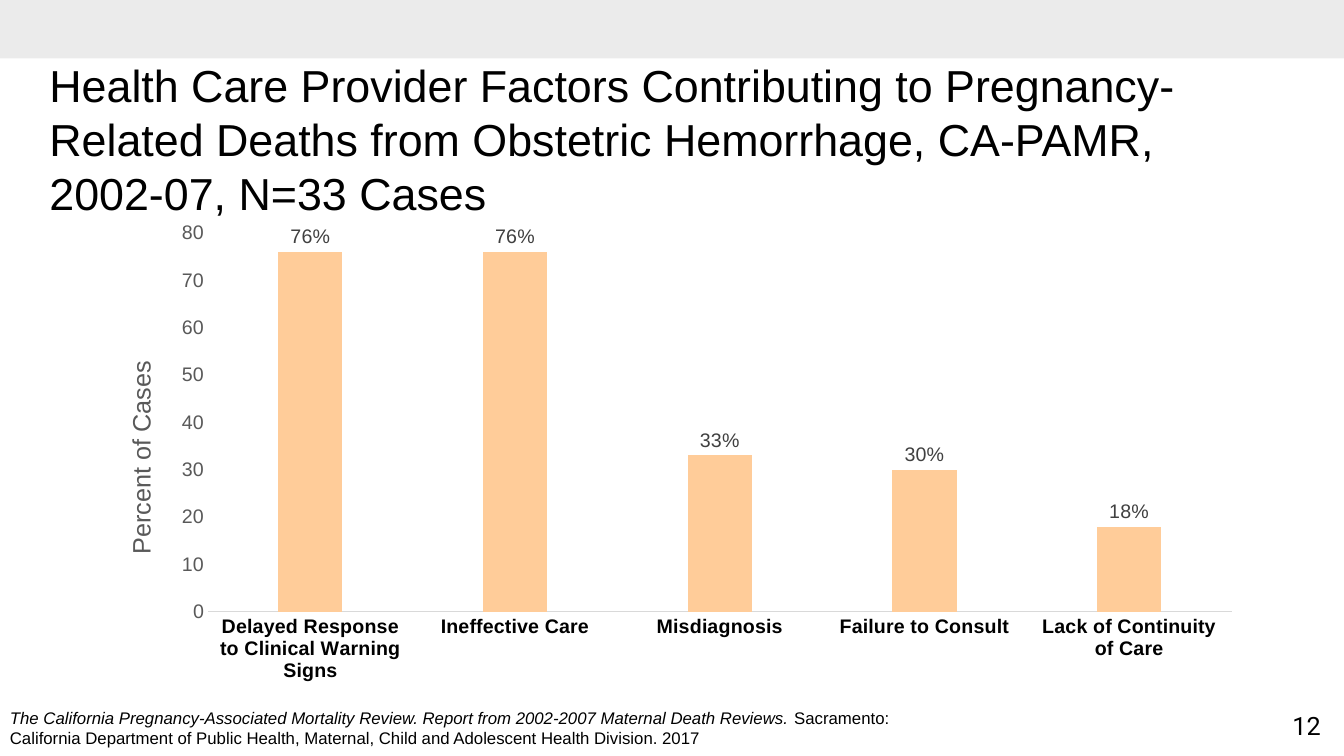
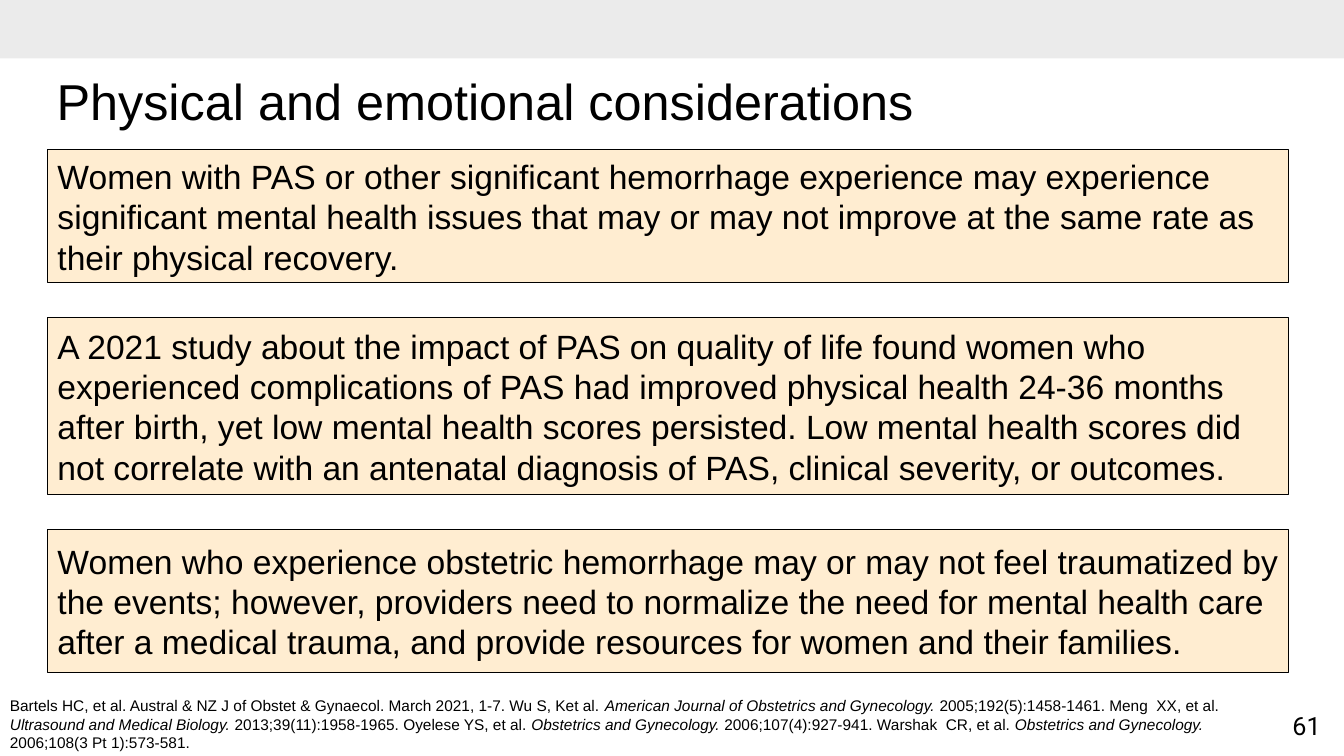
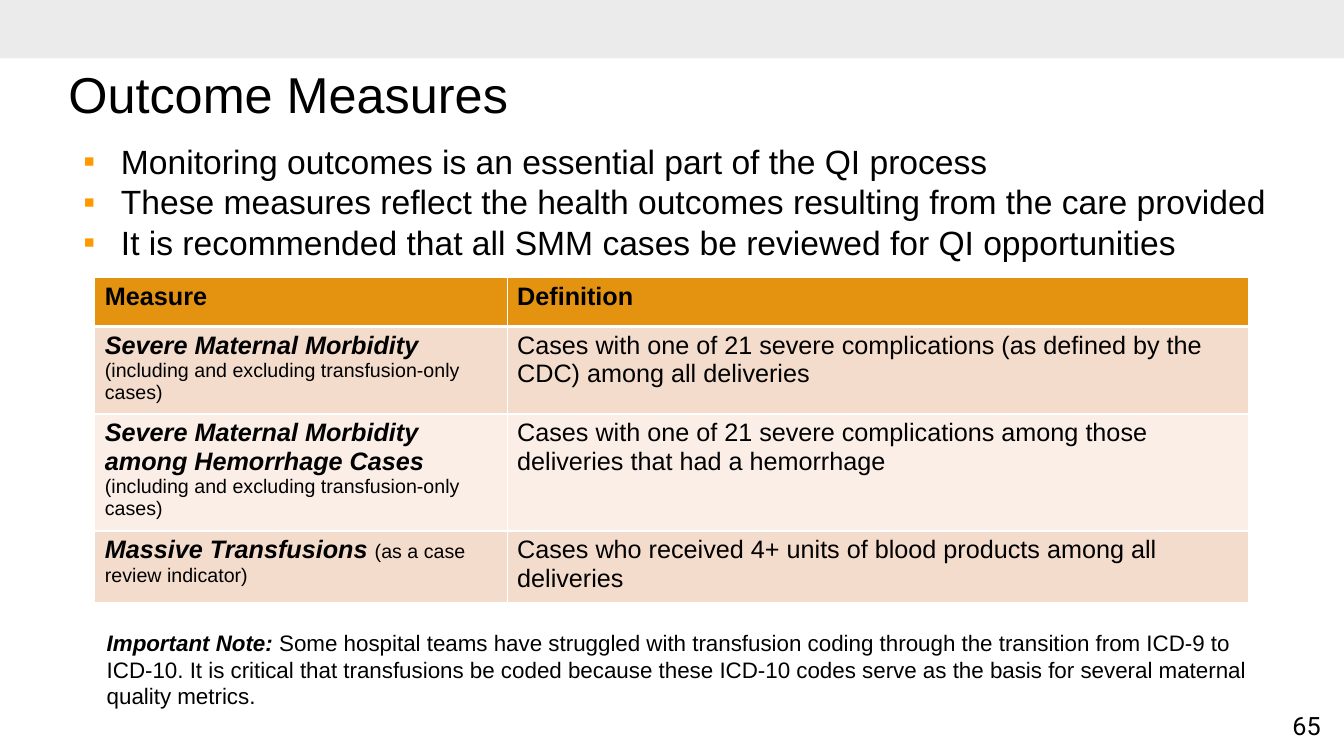
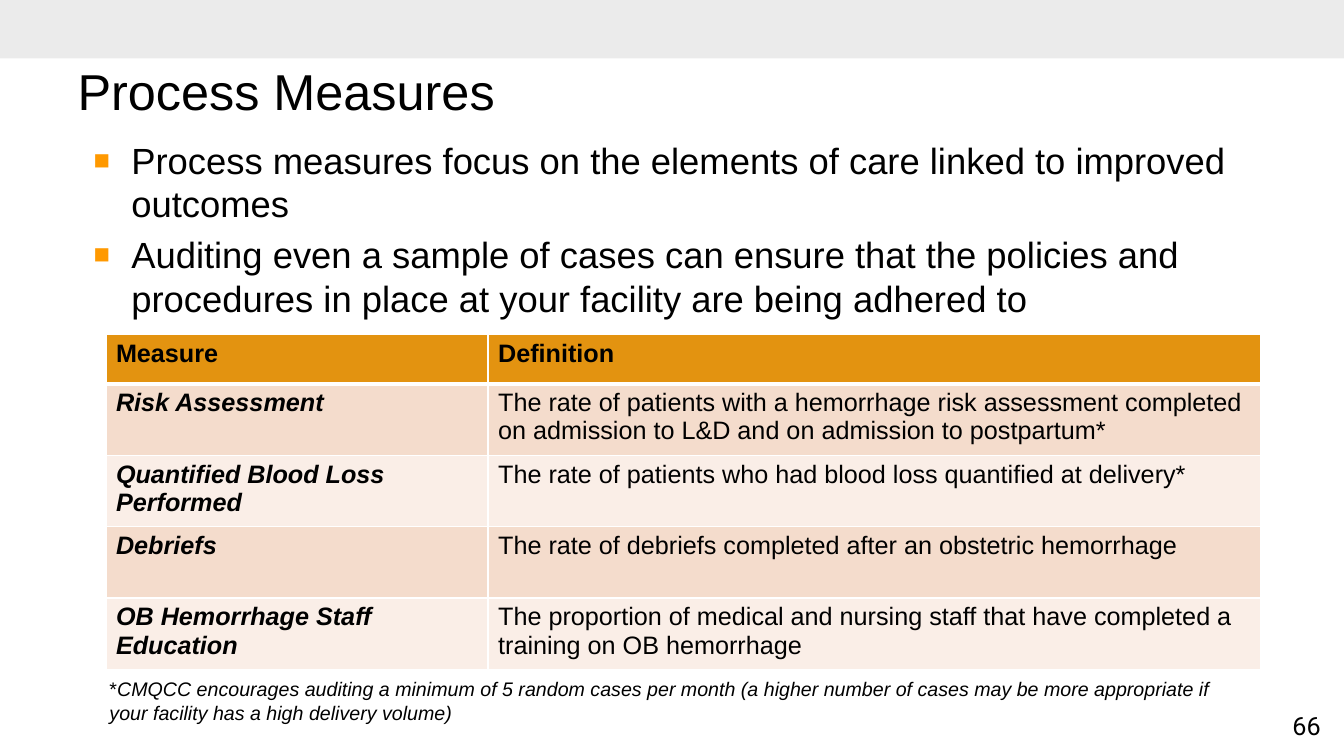
from itertools import accumulate

from lxml import etree
from pptx import Presentation
from pptx.chart import data as chart_data
from pptx.dml import color
from pptx.enum import chart as chart_enum, shapes, text
from pptx.oxml import ns
from pptx.util import Cm, Pt

BLACK, WHITE, BAND = "000000", "FFFFFF", "E3E3E3"
GRAY, DARK_GRAY, AXIS_LINE = "595959", "404040", "D9D9D9"
PEACH, CREAM, BULLET = "FFCC99", "FFEDD1", "FF9900"
HEADER, ROW_ODD, ROW_EVEN = "E39310", "F4DCCC", "FAEEE7"
PLAIN, BOLD, ITALIC, BOLD_ITALIC = "", "b", "i", "bi"


def rgb(value):
    return color.RGBColor.from_string(value)


def cm_box(box):
    return [Cm(length) for length in box]


def sub(parent, tag, **attributes):
    return etree.SubElement(parent, ns.qn(tag), attributes)


def style_font(font, size, shade=BLACK, face="Arial", style=PLAIN):
    font.size = Pt(size)
    font.name = face
    font.color.rgb = rgb(shade)
    font.bold = "b" in style
    font.italic = "i" in style


def add_runs(paragraph, runs, face="Arial"):
    for words, size, style in runs:
        run = paragraph.add_run()
        run.text = words
        style_font(run.font, size, face=face, style=style)


def set_frame(frame, anchor=text.MSO_ANCHOR.TOP):
    frame.word_wrap = True
    frame.auto_size = text.MSO_AUTO_SIZE.NONE
    frame.vertical_anchor = anchor


def add_note(slide, box, runs, align=text.PP_ALIGN.LEFT, face="Arial"):
    frame = slide.shapes.add_textbox(*cm_box(box)).text_frame
    set_frame(frame)
    paragraph = frame.paragraphs[0]
    paragraph.alignment = align
    add_runs(paragraph, runs, face)


def add_panel(slide, box, fill):
    panel = slide.shapes.add_shape(shapes.MSO_SHAPE.RECTANGLE, *cm_box(box))
    panel.shadow.inherit = False
    panel.fill.solid()
    panel.fill.fore_color.rgb = rgb(fill)
    return panel


def start_slide(deck, title, title_box, number, size=36):
    slide = deck.slides.add_slide(deck.slide_layouts[5])
    band = add_panel(slide, (0, 0, 33.91, 1.47), BAND)
    band.line.fill.background()
    tint = band.fill._xPr.find(".//" + ns.qn("a:srgbClr"))
    sub(tint, "a:alpha", val="70000")
    add_note(slide, (32.28, 17.78, 1.3, 1.02), [(number, 18, PLAIN)],
             text.PP_ALIGN.CENTER, "Roboto")
    heading = slide.shapes.title
    heading.left, heading.top, heading.width, heading.height = cm_box(title_box)
    set_frame(heading.text_frame, text.MSO_ANCHOR.MIDDLE)
    paragraph = heading.text_frame.paragraphs[0]
    paragraph.alignment = text.PP_ALIGN.LEFT
    add_runs(paragraph, [(title, size, PLAIN)])
    return slide


def add_bullets(slide, box, items, size, mark, mark_size=100, gap=0):
    frame = slide.shapes.add_textbox(*cm_box(box)).text_frame
    set_frame(frame)
    for index, item in enumerate(items):
        paragraph = frame.paragraphs[0] if index == 0 else frame.add_paragraph()
        if index:
            paragraph.space_before = Pt(gap)
        properties = paragraph._p.get_or_add_pPr()
        properties.set("marL", str(Cm(0.95)))
        properties.set("indent", str(-Cm(0.95)))
        sub(sub(properties, "a:buClr"), "a:srgbClr", val=BULLET)
        sub(properties, "a:buSzPct", val=str(mark_size * 1000))
        sub(properties, "a:buFont", typeface="Arial")
        sub(properties, "a:buChar", char=mark)
        add_runs(paragraph, [(item, size, PLAIN)])


def add_text_panels(slide, left, top, width, gap, panels):
    for height, words in panels:
        panel = add_panel(slide, (left, top, width, height), CREAM)
        panel.line.color.rgb = rgb(BLACK)
        panel.line.width = Pt(0.75)
        set_frame(panel.text_frame, text.MSO_ANCHOR.MIDDLE)
        paragraph = panel.text_frame.paragraphs[0]
        paragraph.alignment = text.PP_ALIGN.LEFT
        add_runs(paragraph, [(words, 24, PLAIN)])
        top += height + gap


def set_cell(cell, runs, fill, bottom=1):
    properties = cell._tc.get_or_add_tcPr()
    for side, width in (("L", 1), ("R", 1), ("T", 1), ("B", bottom)):
        line = sub(properties, "a:ln" + side, w=str(Pt(width)))
        sub(sub(line, "a:solidFill"), "a:srgbClr", val=WHITE)
    cell.fill.solid()
    cell.fill.fore_color.rgb = rgb(fill)
    paragraph = cell.text_frame.paragraphs[0]
    paragraph.alignment = text.PP_ALIGN.LEFT
    add_runs(paragraph, runs)


def add_measures(slide, left, top, widths, heights, measures):
    box = cm_box((left, top, sum(widths), sum(heights)))
    table = slide.shapes.add_table(len(heights), len(widths), *box).table
    for column, width in zip(table.columns, widths):
        column.width = Cm(width)
    for row, height in zip(table.rows, heights):
        row.height = Cm(height)
    for index, label in enumerate(("Measure", "Definition")):
        set_cell(table.cell(0, index), [(label, 18, BOLD)], HEADER, 3)
    for row, (measure, remark, definition) in enumerate(measures, 1):
        fill = ROW_ODD if row % 2 else ROW_EVEN
        name = [(measure, 18, BOLD_ITALIC)]
        if remark:
            name.append((remark, 14, PLAIN))
        set_cell(table.cell(row, 0), name, fill)
        set_cell(table.cell(row, 1), [(definition, 18, PLAIN)], fill)


def place(parent, **fractions):
    for old in parent.findall(ns.qn("c:layout")):
        parent.remove(old)
    layout = etree.Element(ns.qn("c:layout"))
    manual = sub(layout, "c:manualLayout")
    if "w" in fractions:
        sub(manual, "c:layoutTarget", val="inner")
    for mode in ("xMode", "yMode"):
        sub(manual, "c:" + mode, val="edge")
    for key, value in fractions.items():
        sub(manual, "c:" + key, val=str(value))
    words = parent.find(ns.qn("c:tx"))
    parent.insert(0 if words is None else 1, layout)


def add_factor_chart(slide, box, factors):
    data = chart_data.CategoryChartData()
    data.categories = list(factors)
    data.add_series("Series 1", factors.values())
    chart = slide.shapes.add_chart(
        chart_enum.XL_CHART_TYPE.COLUMN_CLUSTERED, *cm_box(box), data).chart
    chart.has_legend = chart.has_title = False
    style_font(chart.font, 10)

    plot = chart.plots[0]
    plot.gap_width, plot.overlap = 219, -27
    plot.vary_by_categories = False
    bars = plot.series[0].format.fill
    bars.solid()
    bars.fore_color.rgb = rgb(PEACH)
    plot.has_data_labels = True
    labels = plot.data_labels
    labels.show_value = True
    labels.number_format = '0"%"'
    labels.number_format_is_linked = False
    labels.position = chart_enum.XL_LABEL_POSITION.OUTSIDE_END
    style_font(labels.font, 14, DARK_GRAY)

    factor_axis, percent_axis = chart.category_axis, chart.value_axis
    for axis in (factor_axis, percent_axis):
        axis.major_tick_mark = chart_enum.XL_TICK_MARK.NONE
        axis.has_major_gridlines = False
    style_font(factor_axis.tick_labels.font, 14, style=BOLD)
    factor_axis.format.line.color.rgb = rgb(AXIS_LINE)
    factor_axis.format.line.width = Pt(0.75)
    style_font(percent_axis.tick_labels.font, 14, GRAY)
    percent_axis.format.line.fill.background()
    percent_axis.minimum_scale, percent_axis.maximum_scale = 0, 80
    percent_axis.major_unit = 10
    run = percent_axis.axis_title.text_frame.paragraphs[0].add_run()
    run.text = "Percent of Cases"
    style_font(run.font, 18, GRAY)
    place(percent_axis.axis_title._element, x=0.02, y=0.3)
    place(chart._chartSpace.chart.plotArea, x=0.096, y=0.042, w=0.883, h=0.79)


def provider_factors(deck):
    slide = start_slide(
        deck,
        "Health Care Provider Factors Contributing to Pregnancy-Related Deaths "
        "from Obstetric Hemorrhage, CA-PAMR, 2002-07, N=33 Cases",
        (0.99, 1.96, 31.55, 3.07), "12", 32)
    add_factor_chart(slide, (2.44, 5.36, 29.21, 12.09), {
        "Delayed Response to Clinical Warning Signs": 76,
        "Ineffective Care": 76,
        "Misdiagnosis": 33,
        "Failure to Consult": 30,
        "Lack of Continuity of Care": 18,
    })
    add_note(slide, (0, 17.7, 24.13, 1.27), [
        ("The California Pregnancy-Associated Mortality Review. Report from "
         "2002-2007 Maternal Death Reviews. ", 12, ITALIC),
        ("Sacramento: California Department of Public Health, Maternal, Child "
         "and Adolescent Health Division. 2017", 12, PLAIN),
    ])


def considerations(deck):
    slide = start_slide(deck, "Physical and emotional considerations",
                        (1.17, 1.63, 23, 1.8), "61")
    add_text_panels(slide, 1.2, 3.78, 31.28, 0.88, [
        (3.35, "Women with PAS or other significant hemorrhage experience may "
               "experience significant mental health issues that may or may not "
               "improve at the same rate as their physical recovery."),
        (4.45, "A 2021 study about the impact of PAS on quality of life found "
               "women who experienced complications of PAS had improved physical "
               "health 24-36 months after birth, yet low mental health scores "
               "persisted. Low mental health scores did not correlate with an "
               "antenatal diagnosis of PAS, clinical severity, or outcomes."),
        (3.61, "Women who experience obstetric hemorrhage may or may not feel "
               "traumatized by the events; however, providers need to normalize "
               "the need for mental health care after a medical trauma, and "
               "provide resources for women and their families."),
    ])
    citations = [
        ("Bartels HC, et al. Austral & NZ J of Obstet & Gynaecol. March 2021, "
         "1-7. Wu S, Ket al. ", PLAIN),
        ("American Journal of Obstetrics and Gynecology. ", ITALIC),
        ("2005;192(5):1458-1461. Meng  XX, et al. ", PLAIN),
        ("Ultrasound and Medical Biology. ", ITALIC),
        ("2013;39(11):1958-1965. Oyelese YS, et al. ", PLAIN),
        ("Obstetrics and Gynecology. ", ITALIC),
        ("2006;107(4):927-941. Warshak  CR, et al. ", PLAIN),
        ("Obstetrics and Gynecology. ", ITALIC),
        ("2006;108(3 Pt 1):573-581.", PLAIN),
    ]
    add_note(slide, (0, 17.42, 32.39, 1.6),
             [(words, 11, style) for words, style in citations])


def outcome_measures(deck):
    slide = start_slide(deck, "Outcome Measures", (1.47, 1.07, 28.78, 2.54), "65")
    add_bullets(slide, (1.85, 3.43, 30.33, 3.4), [
        "Monitoring outcomes is an essential part of the QI process",
        "These measures reflect the health outcomes resulting from the care provided",
        "It is recommended that all SMM cases be reviewed for QI opportunities",
    ], 24, "▪")
    add_measures(slide, 2.39, 6.99, (10.39, 18.69), (1.24, 2.2, 2.95, 1.8), [
        ("Severe Maternal Morbidity ",
         "(including and excluding transfusion-only cases)",
         "Cases with one of 21 severe complications (as defined by the CDC) "
         "among all deliveries"),
        ("Severe Maternal Morbidity among Hemorrhage Cases ",
         "(including and excluding transfusion-only cases)",
         "Cases with one of 21 severe complications among those deliveries "
         "that had a hemorrhage"),
        ("Massive Transfusions ", "(as a case review indicator)",
         "Cases who received 4+ units of blood products among all deliveries"),
    ])
    add_note(slide, (2.44, 15.72, 29.24, 2.31), [
        ("Important Note:", 16, BOLD_ITALIC),
        (" Some hospital teams have struggled with transfusion coding through "
         "the transition from ICD-9 to ICD-10. It is critical that transfusions "
         "be coded because these ICD-10 codes serve as the basis for several "
         "maternal quality metrics.", 16, PLAIN),
    ])


def process_measures(deck):
    slide = start_slide(deck, "Process Measures", (1.7, 1.37, 28.78, 1.8), "66")
    add_bullets(slide, (2.11, 3.35, 30.2, 4.98), [
        "Process measures focus on the elements of care linked to improved outcomes",
        "Auditing even a sample of cases can ensure that the policies and "
        "procedures in place at your facility are being adhered to",
    ], 26, "■", 75, 5.2)
    add_measures(slide, 2.67, 8.43, (9.63, 19.46), (1.24, 1.8, 1.8, 1.8, 1.8), [
        ("Risk Assessment", "",
         "The rate of patients with a hemorrhage risk assessment completed on "
         "admission to L&D and on admission to postpartum*"),
        ("Quantified Blood Loss Performed", "",
         "The rate of patients who had blood loss quantified at delivery*"),
        ("Debriefs", "",
         "The rate of debriefs completed after an obstetric hemorrhage"),
        ("OB Hemorrhage Staff Education", "",
         "The proportion of medical and nursing staff that have completed a "
         "training on OB hemorrhage"),
    ])
    add_note(slide, (2.51, 16.94, 29.24, 1.45), [
        ("*", 14, PLAIN),
        ("CMQCC encourages auditing a minimum of 5 random cases per month (a "
         "higher number of cases may be more appropriate if your facility has a "
         "high delivery volume)", 14, ITALIC),
    ])


def main():
    deck = Presentation()
    deck.slide_width, deck.slide_height = Cm(33.87), Cm(19.05)
    for build in (provider_factors, considerations, outcome_measures,
                  process_measures):
        build(deck)
    deck.save("out.pptx")


if __name__ == "__main__":
    main()
